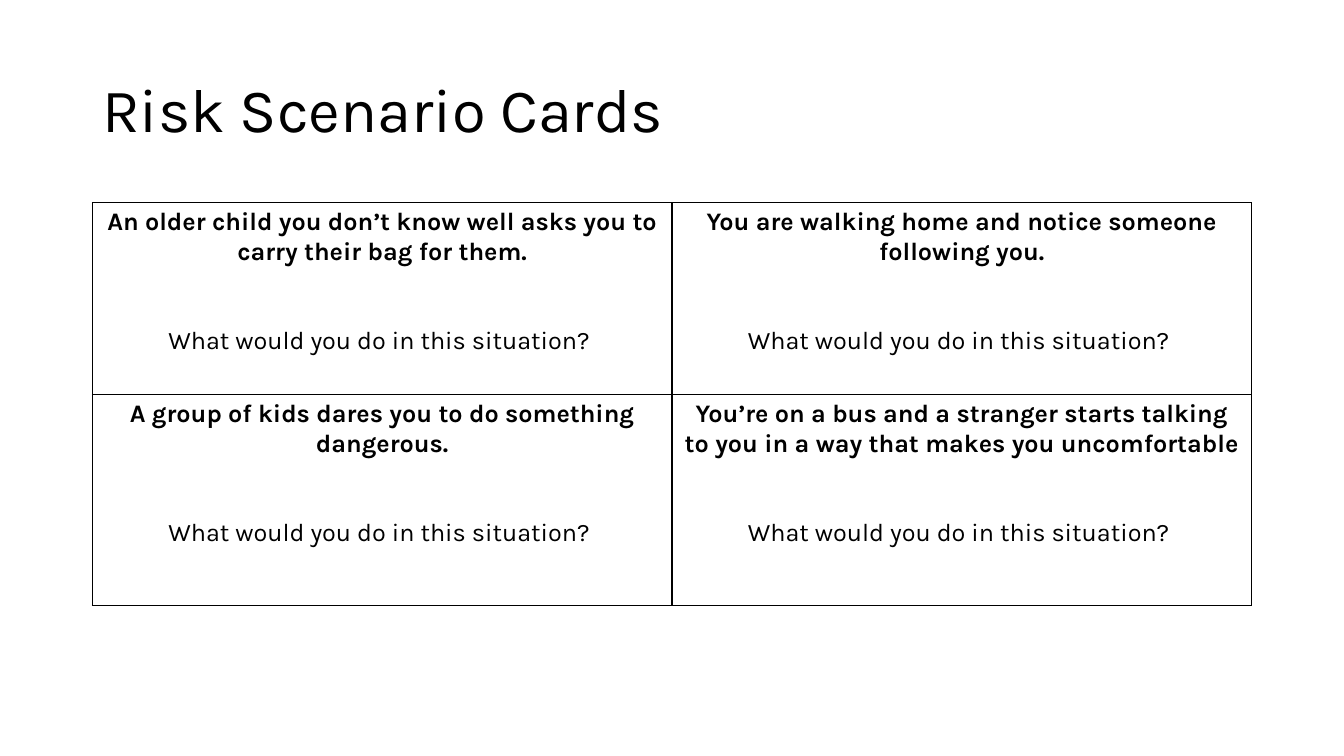
from dataclasses import dataclass

from lxml.etree import SubElement
from pptx import Presentation
from pptx.dml.color import RGBColor
from pptx.enum.text import MSO_ANCHOR, PP_ALIGN
from pptx.oxml.ns import qn
from pptx.util import Pt


@dataclass(frozen=True)
class Theme:
    font: str = "Karla"
    ink: str = "000000"
    title: int = 44
    body: int = 18
    prompt_gap: float = 42.5
    border: int = 1


PX = 9525
PROMPT = "What would you do in this situation? "
SCENARIOS = [
    ["An older child you don’t know well asks you to carry their bag for them.",
     "You are walking home and notice someone following you."],
    ["A group of kids dares you to do something dangerous.",
     "You’re on a bus and a stranger starts talking to you in a way that makes you uncomfortable"],
]


class Deck:
    """Draws themed elements on the current slide."""

    def __init__(self, prs, theme):
        self.theme = theme
        self.s = prs.slides.add_slide(prs.slide_layouts[6])

    def style(self, p, size, bold=False):
        for r in p.runs:
            r.font.name = self.theme.font
            r.font.size = Pt(size)
            r.font.bold = bold
            r.font.color.rgb = RGBColor.from_string(self.theme.ink)

    def title(self, text, x, y, w, h):
        tf = self.s.shapes.add_textbox(x * PX, y * PX, w * PX, h * PX).text_frame
        tf.word_wrap = True
        tf.vertical_anchor = MSO_ANCHOR.MIDDLE
        tf.text = text
        p = tf.paragraphs[0]
        p.line_spacing = 0.9
        self.style(p, self.theme.title)

    def borders(self, cell):
        tcPr = cell._tc.get_or_add_tcPr()
        for side in ("lnL", "lnR", "lnT", "lnB"):
            ln = SubElement(tcPr, qn(f"a:{side}"), w=str(Pt(self.theme.border)))
            fill = SubElement(ln, qn("a:solidFill"))
            SubElement(fill, qn("a:srgbClr"), val=self.theme.ink)

    def card(self, cell, scenario):
        self.borders(cell)
        cell.fill.background()
        tf = cell.text_frame
        tf.text = f"{scenario}\n{PROMPT}"
        for p, bold in zip(tf.paragraphs, (True, False)):
            p.alignment = PP_ALIGN.CENTER
            self.style(p, self.theme.body, bold)
        tf.paragraphs[1].space_before = Pt(self.theme.prompt_gap)

    def cards(self, scenarios, x, y, w, heights):
        cols = len(scenarios[0])
        table = self.s.shapes.add_table(
            len(scenarios), cols, x * PX, y * PX, w * PX, sum(heights) * PX).table
        table.first_row = table.horz_banding = False
        for col in table.columns:
            col.width = w * PX // cols
        for row, height, texts in zip(table.rows, heights, scenarios):
            row.height = height * PX
            for cell, text in zip(row.cells, texts):
                self.card(cell, text)


def main():
    prs = Presentation()
    prs.slide_width, prs.slide_height = 1280 * PX, 720 * PX
    deck = Deck(prs, Theme())
    deck.title("Risk Scenario Cards", 88, 38, 1104, 139)
    deck.cards(SCENARIOS, 88, 193, 1104, [183, 201])
    prs.save("out.pptx")


if __name__ == "__main__":
    main()
